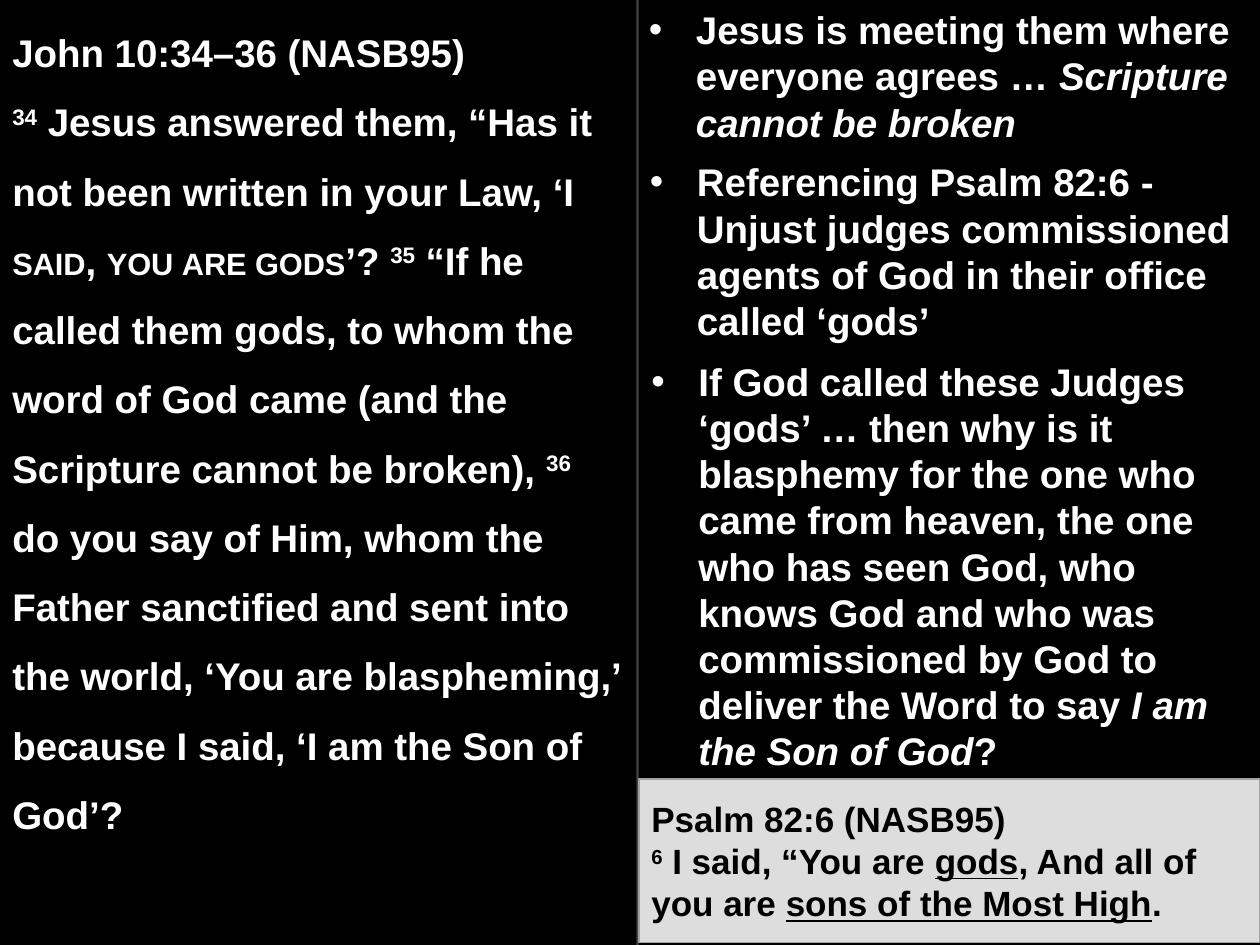
from dataclasses import dataclass
from lxml import etree
from pptx import Presentation
from pptx.dml.color import RGBColor
from pptx.enum import shapes, text
from pptx.oxml.ns import qn
from pptx.util import Cm, Pt


@dataclass(frozen=True)
class Theme:
    font: str = "Arial"
    dark: str = "000000"
    light: str = "FFFFFF"
    panel: str = "DDDDDD"
    edge: str = "A3A3A3"
    body: int = 22
    note: int = 20


def fade(fill, share):
    """Set the opacity of a solid fill, in percent."""
    tint = fill._xPr.find(qn("a:solidFill"))[0]
    etree.SubElement(tint, qn("a:alpha")).set("val", str(share * 1000))


class Page:
    def __init__(self, slide, theme):
        self.slide, self.theme = slide, theme
        back = slide.background.fill
        back.solid()
        back.fore_color.rgb = RGBColor.from_string(theme.dark)

    def runs(self, para, parts, size, color):
        """Add runs; each part is text or a (text, style) pair."""
        for part in parts:
            words, style = (part, "") if isinstance(part, str) else part
            run = para.add_run()
            run.text = words
            font = run.font
            font.name, font.size, font.bold = self.theme.font, Pt(size), True
            font.color.rgb = RGBColor.from_string(color)
            if style == "italic":
                font.italic = True
            elif style == "under":
                font.underline = True
            elif style == "super":
                font._element.set("baseline", "30000")
            elif style == "caps":
                font._element.set("cap", "small")

    def box(self, spot, paras, spacing=None, bullet=False):
        frame = self.slide.shapes.add_textbox(*map(Cm, spot)).text_frame
        frame.word_wrap = True
        frame.auto_size = text.MSO_AUTO_SIZE.SHAPE_TO_FIT_TEXT
        for i, parts in enumerate(paras):
            para = frame.add_paragraph() if i else frame.paragraphs[0]
            if spacing:
                para.line_spacing = spacing
            if bullet:
                props = para._p.get_or_add_pPr()
                props.set("marL", str(Cm(0.95)))
                props.set("indent", str(-Cm(0.95)))
                etree.SubElement(props, qn("a:buFont")).set("typeface", self.theme.font)
                etree.SubElement(props, qn("a:buChar")).set("char", "•")
            self.runs(para, parts, self.theme.body, self.theme.light)

    def rect(self, spot, color, edge=None, paras=(), share=None):
        shape = self.slide.shapes.add_shape(shapes.MSO_SHAPE.RECTANGLE, *map(Cm, spot))
        shape.shadow.inherit = False
        shape.fill.solid()
        shape.fill.fore_color.rgb = RGBColor.from_string(color)
        if share:
            fade(shape.fill, share)
        if edge:
            shape.line.color.rgb = RGBColor.from_string(edge)
            shape.line.width = Pt(1)
        else:
            shape.line.fill.background()
        frame = shape.text_frame
        frame.word_wrap = True
        frame.vertical_anchor = text.MSO_ANCHOR.MIDDLE
        for i, parts in enumerate(paras):
            para = frame.add_paragraph() if i else frame.paragraphs[0]
            para.alignment = text.PP_ALIGN.LEFT
            self.runs(para, parts, self.theme.note, self.theme.dark)

    def rule(self, x, top, end):
        line = self.slide.shapes.add_connector(
            shapes.MSO_CONNECTOR.STRAIGHT, Cm(x), Cm(top), Cm(x), Cm(end))
        line.line.color.rgb = RGBColor.from_string(self.theme.light)
        line.line.width = Pt(1.25)
        fade(line.line.fill, 25)
        etree.SubElement(line._element.spPr, qn("a:effectLst"))


def main():
    wide, high = 25.4, 19.05
    deck = Presentation()
    deck.slide_width, deck.slide_height = Cm(wide), Cm(high)
    theme = Theme()
    page = Page(deck.slides.add_slide(deck.slide_layouts[6]), theme)

    page.rect((0, 0, wide, high), theme.dark, share=75)
    page.box((0, 0, 12.83, 17.2), [
        ["John 10:34–36 (NASB95)"],
        [("34", "super"),
         " Jesus answered them, “Has it not been written in your Law, ‘I ",
         ("said", "caps"), ", ", ("you are gods", "caps"), "’? ",
         ("35", "super"),
         " “If he called them gods, to whom the word of God came "
         "(and the Scripture cannot be broken), ",
         ("36", "super"),
         " do you say of Him, whom the Father sanctified and sent into the world, "
         "‘You are blaspheming,’ because I said, ‘I am the Son of God’?"],
    ], spacing=1.5)
    page.rule(12.85, 0, high)

    points = [
        ((12.83, 0, 12.67, 3.07),
         ["Jesus is meeting them where everyone agrees … ",
          ("Scripture cannot be broken", "italic")]),
        ((12.85, 3.07, 12.55, 4.01),
         ["Referencing Psalm 82:6 - Unjust judges commissioned agents of God "
          "in their office called ‘gods’"]),
        ((12.88, 7.09, 12.55, 8.71),
         ["If God called these Judges ‘gods’ … then why is it blasphemy for the one "
          "who came from heaven, the one who has seen God, who knows God and who was "
          "commissioned by God to deliver the Word to say ",
          ("I am the Son of God", "italic"), "?"]),
    ]
    page.rect((12.88, 15.7, 12.52, 3.3), theme.panel, theme.edge, [
        ["Psalm 82:6 (NASB95)"],
        [("6", "super"), " I said, “You are ", ("gods", "under"),
         ", And all of you are ", ("sons of the Most High", "under"), "."],
    ])
    for spot, parts in points:
        page.box(spot, [parts], bullet=True)

    deck.save("out.pptx")


if __name__ == "__main__":
    main()
